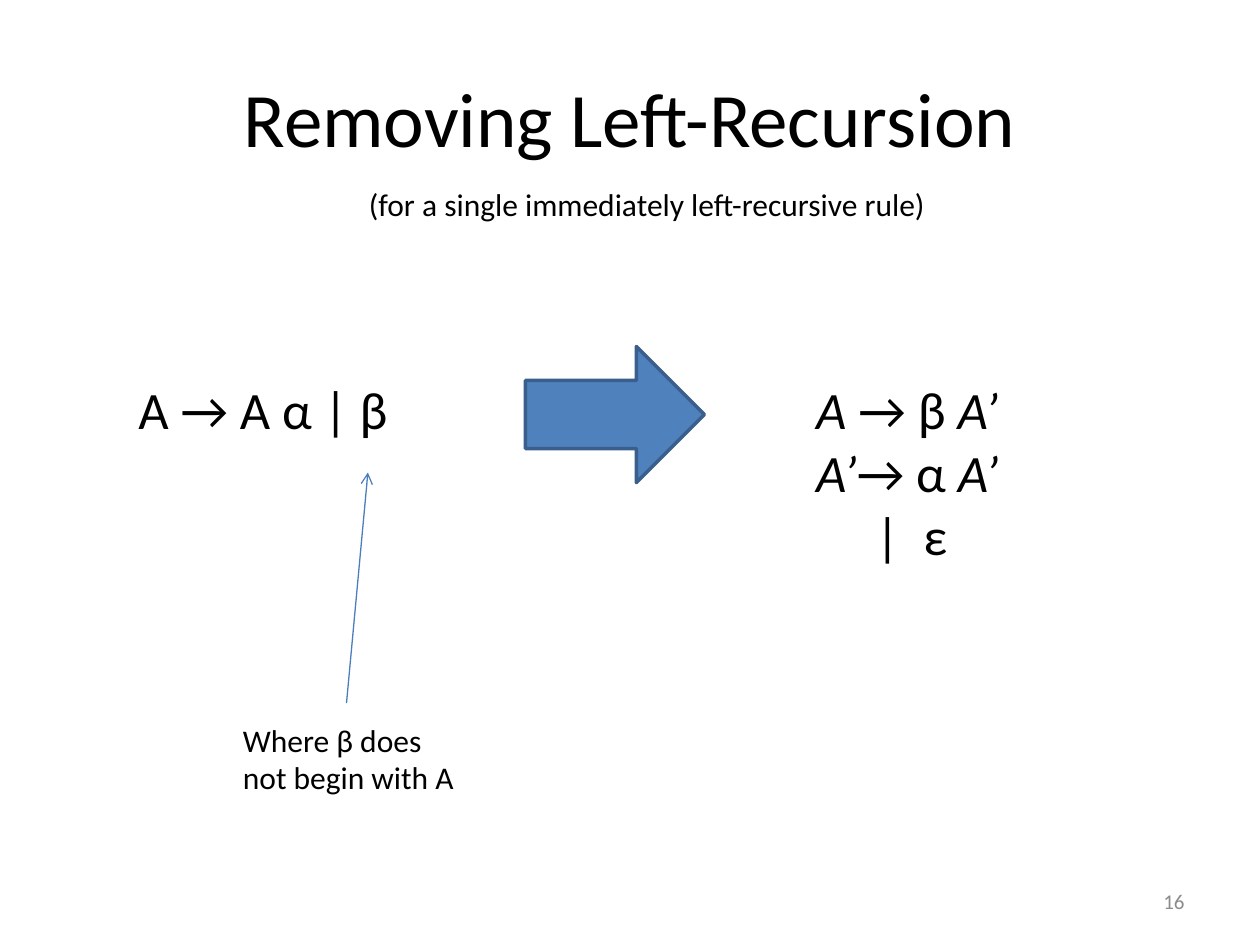
import pptx
import pptx.util
import pptx.dml.color
import pptx.enum.shapes
import pptx.enum.text
import pptx.oxml
from lxml import etree

Inches = pptx.util.Inches
Pt = pptx.util.Pt
RGBColor = pptx.dml.color.RGBColor
ALIGN = pptx.enum.text.PP_ALIGN
ANCHOR = pptx.enum.text.MSO_ANCHOR

BLACK = RGBColor(0x00, 0x00, 0x00)
GRAY = RGBColor(0x8C, 0x8C, 0x8C)
BLUE = RGBColor(0x4F, 0x81, 0xBD)
DARK_BLUE = RGBColor(0x3A, 0x5F, 0x8C)
LINE_BLUE = RGBColor(0x4B, 0x7E, 0xBC)
FONT = "Calibri"

TITLE = [["Removing Left-Recursion"]]
SUBTITLE = [["(for a single immediately left-recursive rule)"]]
PAGE_NUMBER = [["16"]]
RECURSIVE_RULE = [["A → A α | β"]]
REWRITTEN_RULES = [
    [("A", True), " → β ", ("A’", True)],
    [("A’", True), "→ α ", ("A’", True)],
    ["|  ε"],
]
CONDITION = [["Where β does"], ["not begin with A"]]

TEXTS = [
    (TITLE, (0.5, 0.3, 9, 1.25), 44, BLACK, ALIGN.CENTER, ANCHOR.MIDDLE, True),
    (PAGE_NUMBER, (7.17, 6.95, 2.33, 0.4), 12, GRAY, ALIGN.RIGHT, ANCHOR.MIDDLE, True),
    (RECURSIVE_RULE, (1, 2.94, 2.2, 0.61), 30, BLACK, ALIGN.LEFT, ANCHOR.TOP, False),
    (REWRITTEN_RULES, (6.38, 2.94, 1.66, 1.62), 30, BLACK, ALIGN.LEFT, ANCHOR.TOP, False),
    (SUBTITLE, (2.83, 1.42, 5, 0.4), 18, BLACK, ALIGN.LEFT, ANCHOR.TOP, True),
    (CONDITION, (1.83, 5.67, 1.9, 0.71), 18, BLACK, ALIGN.LEFT, ANCHOR.TOP, False),
]
ALTERNATIVE_INDENT = Inches(0.47)
RULE_ARROW = (4.17, 2.75, 1.42, 1.08)
POINTER = (2.75, 5.58, 2.92, 3.75)


def add_text(slide, lines, box, size, color, alignment, anchor, wrap):
    frame = slide.shapes.add_textbox(*map(Inches, box)).text_frame
    frame.word_wrap = wrap
    frame.vertical_anchor = anchor
    for index, line in enumerate(lines):
        paragraph = frame.paragraphs[0] if index == 0 else frame.add_paragraph()
        paragraph.alignment = alignment
        paragraph.font.name = FONT
        paragraph.font.size = Pt(size)
        paragraph.font.color.rgb = color
        for part in line:
            text, italic = (part, None) if isinstance(part, str) else part
            run = paragraph.add_run()
            run.text = text
            run.font.italic = italic
    return frame


def add_rule_arrow(slide):
    arrow = slide.shapes.add_shape(
        pptx.enum.shapes.MSO_SHAPE.RIGHT_ARROW, *map(Inches, RULE_ARROW))
    arrow.shadow.inherit = False
    arrow.fill.solid()
    arrow.fill.fore_color.rgb = BLUE
    arrow.line.color.rgb = DARK_BLUE
    arrow.line.width = Pt(2)


def add_pointer(slide):
    pointer = slide.shapes.add_connector(
        pptx.enum.shapes.MSO_CONNECTOR.STRAIGHT, *map(Inches, POINTER))
    pointer.line.color.rgb = LINE_BLUE
    pointer.line.width = Pt(0.75)
    tail = etree.SubElement(pointer.line._get_or_add_ln(), pptx.oxml.ns.qn("a:tailEnd"))
    tail.set("type", "arrow")
    etree.SubElement(pointer._element.spPr, pptx.oxml.ns.qn("a:effectLst"))


def main():
    presentation = pptx.Presentation()
    presentation.slide_width = Inches(10)
    presentation.slide_height = Inches(7.5)
    slide = presentation.slides.add_slide(presentation.slide_layouts[6])
    for lines, *style in TEXTS:
        frame = add_text(slide, lines, *style)
        if lines is REWRITTEN_RULES:
            properties = frame.paragraphs[-1]._p.get_or_add_pPr()
            properties.set("marL", str(ALTERNATIVE_INDENT))
    add_rule_arrow(slide)
    add_pointer(slide)
    presentation.save("out.pptx")


if __name__ == "__main__":
    main()
